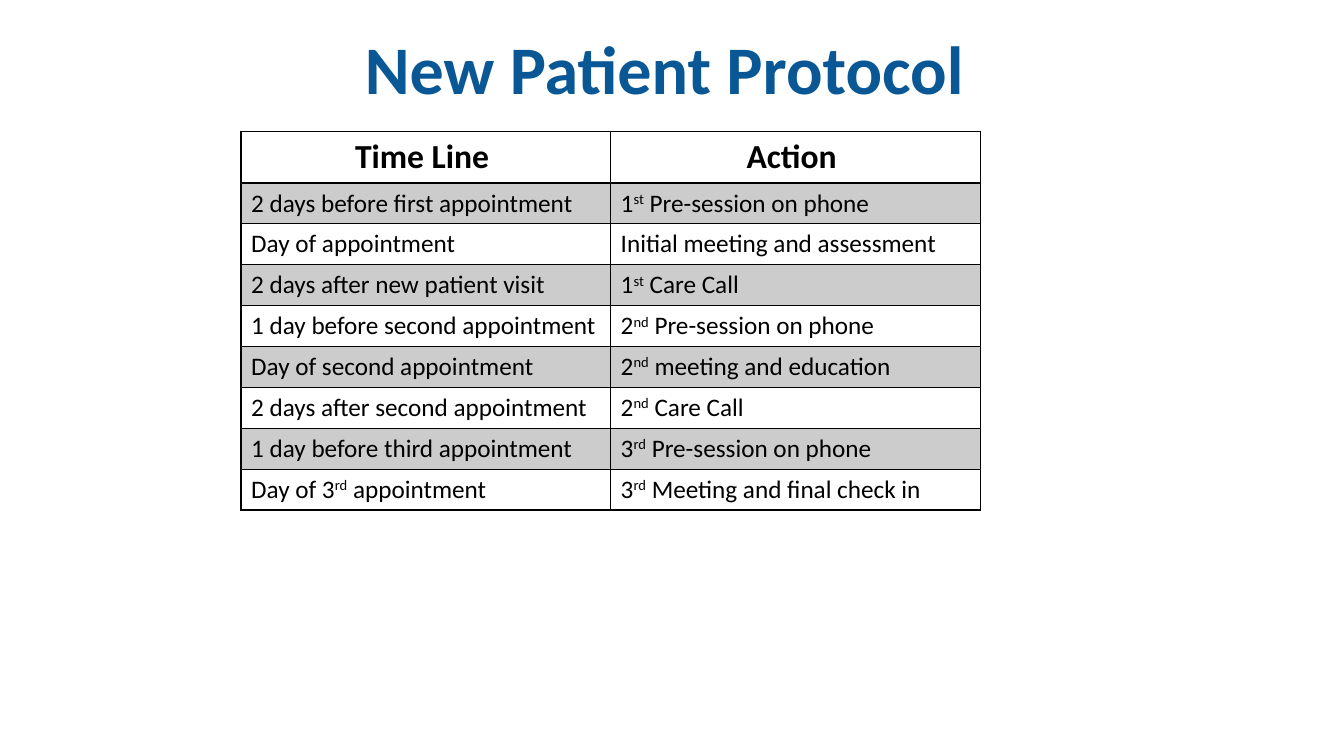
from lxml import etree
from pptx import Presentation
from pptx.dml.color import RGBColor
from pptx.enum.text import MSO_ANCHOR, PP_ALIGN
from pptx.oxml.ns import qn
from pptx.util import Emu, Inches, Pt

CENTER, LEFT = PP_ALIGN.CENTER, PP_ALIGN.LEFT
MIDDLE = MSO_ANCHOR.MIDDLE
COLUMNS, ROWS = 160, 90
UNIT = Inches(1) // 12
COLORS = {"title": "095895", "ink": "000000"}
BAND_OPACITY = 20
TITLE_FONT = {"name": "Calibri", "size": Pt(48.6), "bold": True}
HEADER_FONT = {"name": "Calibri", "size": Pt(24), "bold": True}
BODY_FONT = {"name": "Calibri", "size": Pt(18), "bold": False}

PROTOCOL = [
    ("Time Line ", "Action "),
    ("2 days before first appointment", "1^st^ Pre-session on phone"),
    ("Day of appointment", "Initial meeting and assessment"),
    ("2 days after new patient visit", "1^st^ Care Call"),
    ("1 day before second appointment", "2^nd^ Pre-session on phone"),
    ("Day of second appointment", "2^nd^ meeting and education"),
    ("2 days after second appointment", "2^nd^ Care Call"),
    ("1 day before third appointment", "3^rd^ Pre-session on phone"),
    ("Day of 3^rd^ appointment", "3^rd^ Meeting and final check in"),
]


def grid(*cells):
    return [Emu(round(cell * UNIT)) for cell in cells]


class ProtocolSlide:
    def __init__(self, presentation):
        self.slide = presentation.slides.add_slide(presentation.slide_layouts[5])

    def add_text(self, paragraph, text, font, color, align):
        paragraph.alignment = align
        for index, piece in enumerate(text.split("^")):
            run = paragraph.add_run()
            run.text = piece
            for name, value in font.items():
                setattr(run.font, name, value)
            run.font.color.rgb = RGBColor.from_string(COLORS[color])
            if index % 2:
                run.font._element.set("baseline", "30000")

    def title(self, text, left, top, width, height):
        heading = self.slide.shapes.title
        heading.left, heading.top, heading.width, heading.height = grid(
            left, top, width, height)
        heading.text_frame.vertical_anchor = MIDDLE
        paragraph = heading.text_frame.paragraphs[0]
        paragraph.line_spacing = 0.9
        self.add_text(paragraph, text, TITLE_FONT, "title", CENTER)

    def border(self, cell, side, points):
        properties = cell._tc.get_or_add_tcPr()
        line = etree.SubElement(properties, qn(f"a:ln{side}"), w=str(Pt(points)))
        fill = etree.SubElement(line, qn("a:solidFill"))
        etree.SubElement(fill, qn("a:srgbClr"), val=COLORS["ink"])

    def band(self, cell):
        cell.fill.solid()
        cell.fill.fore_color.rgb = RGBColor.from_string(COLORS["ink"])
        shade = cell._tc.tcPr.find(f"{qn('a:solidFill')}/{qn('a:srgbClr')}")
        etree.SubElement(shade, qn("a:alpha"), val=str(BAND_OPACITY * 1000))

    def table(self, entries, left, top, width, height, row_height):
        frame = self.slide.shapes.add_table(
            len(entries), len(entries[0]), *grid(left, top, width, height))
        schedule = frame.table
        schedule.first_row = schedule.horz_banding = False
        for row_index, entry in enumerate(entries):
            schedule.rows[row_index].height = grid(row_height)[0]
            header = row_index == 0
            weights = {"L": 1, "R": 1, "T": 2 if row_index == 1 else 1,
                       "B": 2 if header else 1}
            for column_index, text in enumerate(entry):
                cell = schedule.cell(row_index, column_index)
                for side, points in weights.items():
                    self.border(cell, side, points)
                if row_index % 2:
                    self.band(cell)
                else:
                    cell.fill.background()
                self.add_text(cell.text_frame.paragraphs[0], text,
                              HEADER_FONT if header else BODY_FONT, "ink",
                              CENTER if header else LEFT)
        frame.height = grid(height)[0]


def main():
    presentation = Presentation()
    presentation.slide_width, presentation.slide_height = grid(COLUMNS, ROWS)
    protocol = ProtocolSlide(presentation)
    protocol.title("New Patient Protocol ", 11, 3.1, 138, 11)
    protocol.table(PROTOCOL, 28.7, 15.7, 88, 44.4, 4.44)
    presentation.save("out.pptx")


if __name__ == "__main__":
    main()
